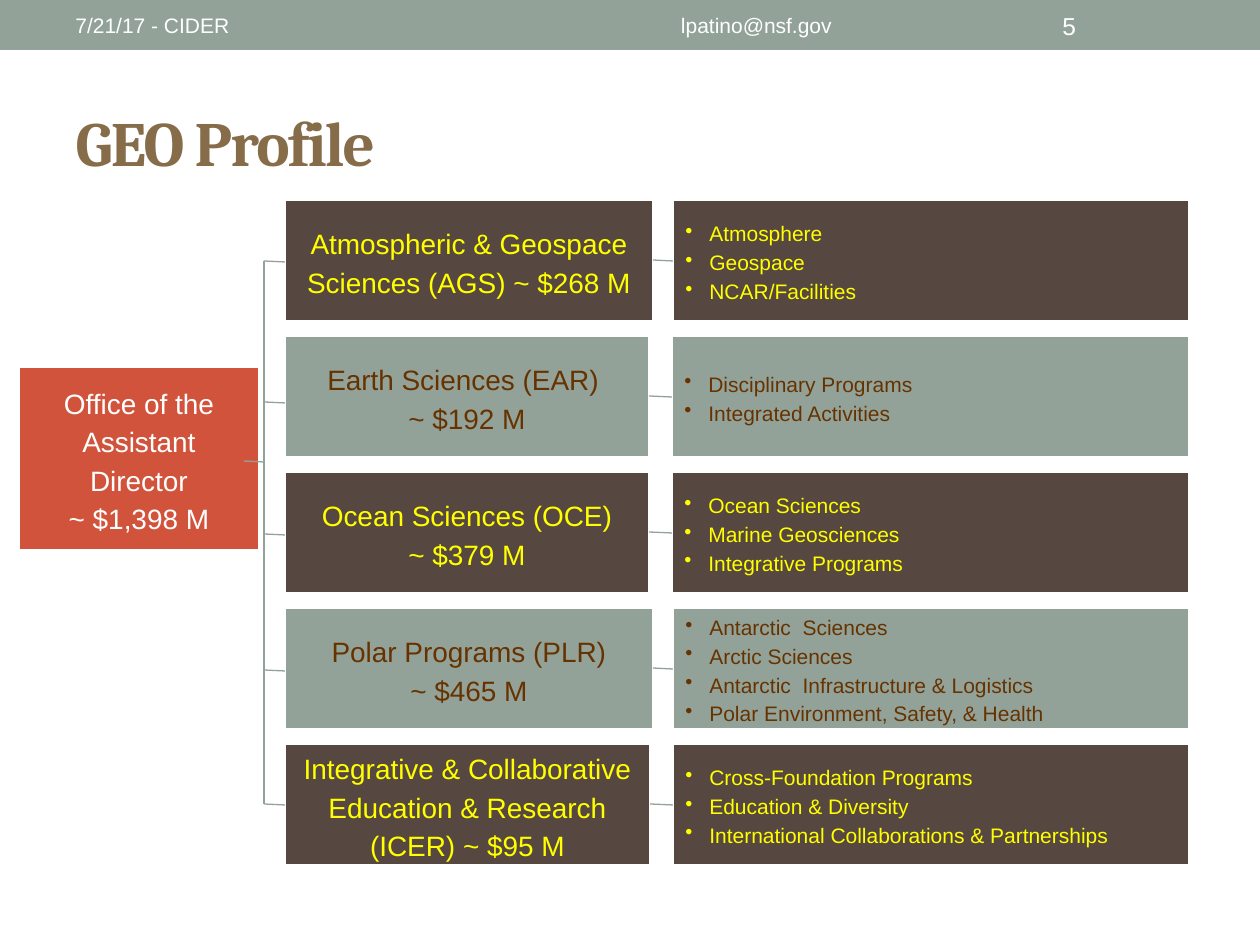
import pptx
import pptx.util
import pptx.dml.color
import pptx.enum.shapes
import pptx.enum.text
import lxml.etree

COLORS = {"sage": "93A299", "brown": "564841", "red": "D2533C", "title": "866C49",
          "white": "FFFFFF", "yellow": "FFFF00", "chestnut": "663300"}

TITLE = "GEO Profile"
OFFICE = ["Office of the Assistant Director", "~ $1,398 M"]
HEADER = [
    ("7/21/17 - CIDER", 63, 399, 12, "LEFT"),
    ("lpatino@nsf.gov", 473, 567, 12, "CENTER"),
    ("5", 1050, 147, 14, "LEFT"),
]
DIVISIONS = [
    (["Atmospheric & Geospace Sciences (AGS) ~ $268 M"],
     ["Atmosphere", "Geospace", "NCAR/Facilities"], 368, 673, 261),
    (["Earth Sciences (EAR) ", "~ $192 M"],
     ["Disciplinary Programs", "Integrated Activities"], 364, 672, 402),
    (["Ocean Sciences (OCE)", "~ $379 M"],
     ["Ocean Sciences", "Marine Geosciences", "Integrative Programs"], 364, 672, 534),
    (["Polar Programs (PLR)", "~ $465 M"],
     ["Antarctic  Sciences", "Arctic Sciences", "Antarctic  Infrastructure & Logistics",
      "Polar Environment, Safety, & Health"], 368, 673, 670),
    (["Integrative & Collaborative Education & Research (ICER) ~ $95 M"],
     ["Cross-Foundation Programs", "Education & Diversity",
      "International Collaborations & Partnerships"], 365, 673, 804),
]
NAME_LEFT, DETAIL_RIGHT, TRUNK = 285, 1189, 264
ROW_TOP, ROW_PITCH, ROW_HEIGHT = 200, 136, 121
INDENT = 24


def px(value):
    return pptx.util.Emu(round(value * 914400 / 126))


def rgb(name):
    return pptx.dml.color.RGBColor.from_string(COLORS[name])


def style(paragraph, size, color, align="LEFT", font="Arial"):
    paragraph.alignment = getattr(pptx.enum.text.PP_ALIGN, align)
    paragraph.font.size = pptx.util.Pt(size)
    paragraph.font.name = font
    paragraph.font.color.rgb = rgb(color)


def add_bullet(paragraph):
    properties = paragraph._p.get_or_add_pPr()
    properties.set("marL", str(px(INDENT)))
    properties.set("indent", str(-px(INDENT)))
    bullet = lxml.etree.SubElement(properties, pptx.oxml.ns.qn("a:buChar"))
    bullet.set("char", "•")


def add_box(slide, left, top, width, height, fill, lines=(), size=16, color="white",
            bullets=False, outline=True):
    shape = slide.shapes.add_shape(pptx.enum.shapes.MSO_SHAPE.RECTANGLE,
                                   px(left), px(top), px(width), px(height))
    shape.shadow.inherit = False
    shape.fill.solid()
    shape.fill.fore_color.rgb = rgb(fill)
    if outline:
        shape.line.color.rgb = rgb("white")
        shape.line.width = pptx.util.Pt(1)
    else:
        shape.line.fill.background()
    frame = shape.text_frame
    frame.word_wrap = True
    frame.vertical_anchor = pptx.enum.text.MSO_ANCHOR.MIDDLE
    for index, line in enumerate(lines):
        paragraph = frame.add_paragraph() if index else frame.paragraphs[0]
        paragraph.text = line
        paragraph.line_spacing = 1.14
        if bullets:
            add_bullet(paragraph)
        style(paragraph, size, color, "LEFT" if bullets else "CENTER")


def add_line(slide, x1, y1, x2, y2):
    line = slide.shapes.add_connector(pptx.enum.shapes.MSO_CONNECTOR.STRAIGHT,
                                      px(x1), px(y1), px(x2), px(y2))
    line.line.color.rgb = rgb("sage")
    line.line.width = pptx.util.Pt(0.75)
    lxml.etree.SubElement(line._element.spPr, pptx.oxml.ns.qn("a:effectLst"))


def add_title(slide):
    title = slide.shapes.title
    title.left, title.top, title.width, title.height = px(63), px(73), px(1134), px(136)
    title.text_frame.text = TITLE
    title.text_frame.vertical_anchor = pptx.enum.text.MSO_ANCHOR.MIDDLE
    paragraph = title.text_frame.paragraphs[0]
    style(paragraph, 36, "title", font="Cambria")
    paragraph.font.bold = True
    paragraph.runs[0]._r.get_or_add_rPr().set("spc", "-100")


def add_header(slide):
    for text, left, width, size, align in HEADER:
        box = slide.shapes.add_textbox(px(left), px(3), px(width), px(45))
        box.text_frame.word_wrap = True
        box.text_frame.vertical_anchor = pptx.enum.text.MSO_ANCHOR.MIDDLE
        box.text_frame.text = text
        style(box.text_frame.paragraphs[0], size, "white", align)


def add_divisions(slide):
    for row, (name, programs, width, detail_left, _) in enumerate(DIVISIONS):
        top = ROW_TOP + row * ROW_PITCH
        fill, color = ("sage", "chestnut") if row % 2 else ("brown", "yellow")
        add_box(slide, NAME_LEFT, top, width, ROW_HEIGHT, fill, name, 16, color)
        add_box(slide, detail_left, top, DETAIL_RIGHT - detail_left, ROW_HEIGHT,
                fill, programs, 12, color, bullets=True)
    for row, (_, _, width, detail_left, branch) in enumerate(DIVISIONS):
        middle = ROW_TOP + row * ROW_PITCH + ROW_HEIGHT // 2
        add_line(slide, NAME_LEFT + width, middle, detail_left, middle + 1)
        add_line(slide, TRUNK, branch, NAME_LEFT, branch + 1)
    add_line(slide, TRUNK, DIVISIONS[0][-1], TRUNK, DIVISIONS[-1][-1])
    add_line(slide, 244, 461, TRUNK, 462)


def main():
    presentation = pptx.Presentation()
    presentation.slide_width, presentation.slide_height = px(1260), px(945)
    slide = presentation.slides.add_slide(presentation.slide_layouts[5])
    add_box(slide, 0, 0, 1260, 50, "sage", outline=False)
    add_title(slide)
    add_box(slide, 19, 367, 240, 183, "red", OFFICE)
    add_divisions(slide)
    add_header(slide)
    presentation.save("out.pptx")


if __name__ == "__main__":
    main()
